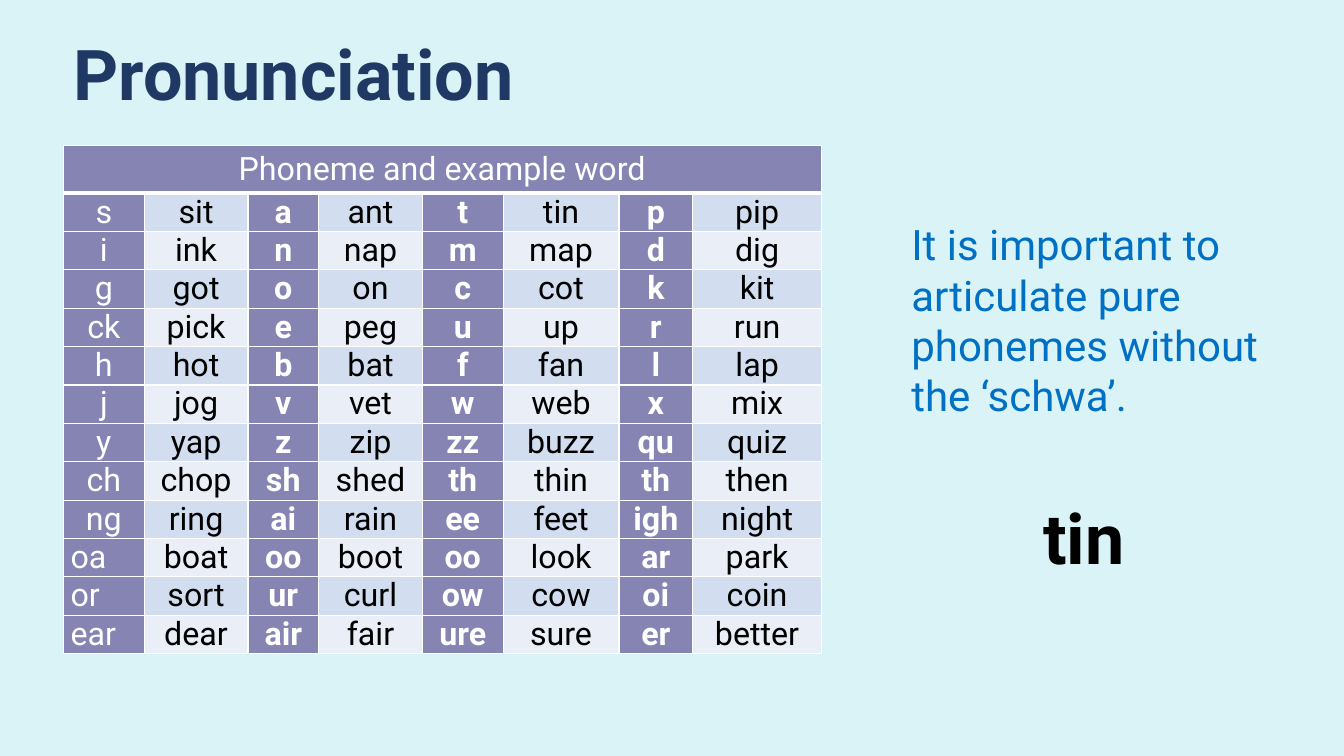
"""Build the slide of phonemes with example words."""
from dataclasses import dataclass

from lxml import etree
from pptx import Presentation
from pptx import util as u
from pptx.dml.color import RGBColor
from pptx.enum import text
from pptx.oxml import ns

WIDE, HIGH = u.Inches(13.33), u.Inches(7.5)
FONT = "Roboto"
SKY = RGBColor(0xD9, 0xF3, 0xF7)
NAVY = RGBColor(0x20, 0x38, 0x64)
BLUE = RGBColor(0x00, 0x70, 0xC4)
PLUM = RGBColor(0x35, 0x17, 0x71)
WHITE = RGBColor(0xFF, 0xFF, 0xFF)
BLACK = RGBColor(0x00, 0x00, 0x00)
BANDS = (RGBColor(0xD2, 0xDE, 0xEF), RGBColor(0xEA, 0xEF, 0xF7))
LEFT, MID = text.PP_ALIGN.LEFT, text.PP_ALIGN.CENTER

COLS = (6, 7.73, 5.25, 7.73, 6, 8.63, 5.48, 9.6)
HEAD, ROW = 6.27, 5.08
WORDS = """
s sit a ant t tin p pip
i ink n nap m map d dig
g got o on c cot k kit
ck pick e peg u up r run
h hot b bat f fan l lap
j jog v vet w web x mix
y yap z zip zz buzz qu quiz
ch chop sh shed th thin th then
ng ring ai rain ee feet igh night
oa boat oo boot oo look ar park
or sort ur curl ow cow oi coin
ear dear air fair ure sure er better
"""
LONG = ("oa", "or", "ear")


@dataclass(frozen=True)
class Box:
    """Hold a place in hundredths of the slide's width and height."""

    x: float
    y: float
    w: float
    h: float

    def place(self) -> tuple:
        """Return left, top, width and height as lengths."""
        return across(self.x), down(self.y), across(self.w), down(self.h)


@dataclass(frozen=True)
class Line:
    """Hold a paragraph and its format."""

    words: str
    size: int
    tint: RGBColor
    bold: bool = False
    gap: int = 0
    inset: float = 0
    pitch: float = 1.0


TITLE = Box(4.73, 4.67, 86.27, 19.33)
NOTE = Box(67.07, 28.27, 32.03, 49.33)
TEXTS = (
    (TITLE, (Line("Pronunciation", 50, NAVY, True, pitch=0.9),)),
    (NOTE, (
        Line("It is important to articulate pure phonemes without the ‘schwa’.", 30, BLUE),
        Line("tin", 50, BLACK, True, gap=53, inset=9.8),
    )),
)


def across(part: float) -> int:
    """Turn hundredths of the width into a length."""
    return round(WIDE * part / 100)


def down(part: float) -> int:
    """Turn hundredths of the height into a length."""
    return round(HIGH * part / 100)


def write(para, words: str, *, size: int, tint: RGBColor, bold: bool = False,
          align=LEFT, gap: int = 0, inset: float = 0, pitch: float = 1.0) -> None:
    """Write one run of text and format its paragraph."""
    para.alignment, para.line_spacing = align, pitch
    para.space_before = u.Pt(gap)
    para._p.get_or_add_pPr().set("marL", str(across(inset)))
    run = para.add_run()
    run.text = words
    font = run.font
    font.name, font.size, font.bold = FONT, u.Pt(size), bold
    font.color.rgb = tint


def add_text(slide, box: Box, lines: tuple) -> None:
    """Add a text box with one paragraph for each line."""
    frame = slide.shapes.add_textbox(*box.place()).text_frame
    frame.word_wrap = True
    for at, line in enumerate(lines):
        para = frame.add_paragraph() if at else frame.paragraphs[0]
        write(para, line.words, size=line.size, tint=line.tint, bold=line.bold,
              gap=line.gap, inset=line.inset, pitch=line.pitch)


def edge(cell, base: int = 1) -> None:
    """Draw white borders round a cell."""
    for side, width in (("L", 1), ("R", 1), ("T", 1), ("B", base)):
        line = etree.SubElement(cell._tc.get_or_add_tcPr(), ns.qn(f"a:ln{side}"),
                                w=str(u.Pt(width)))
        fill = etree.SubElement(line, ns.qn("a:solidFill"))
        etree.SubElement(fill, ns.qn("a:srgbClr"), val=str(WHITE))


def paint(cell, tint: RGBColor) -> None:
    """Fill a cell, letting plum show half through."""
    cell.fill.solid()
    cell.fill.fore_color.rgb = tint
    if tint == PLUM:
        tone = cell._tc.tcPr.find(".//" + ns.qn("a:solidFill") + "[last()]")
        tone = cell._tc.tcPr.find(ns.qn("a:solidFill"))[0]
        etree.SubElement(tone, ns.qn("a:alpha"), val="50000")


def add_grid(slide) -> None:
    """Add the table of phonemes and words."""
    rows = [line.split() for line in WORDS.split("\n") if line]
    box = Box(4.73, 19.2, sum(COLS), HEAD + ROW * len(rows))
    grid = slide.shapes.add_table(len(rows) + 1, len(COLS), *box.place()).table
    grid.first_row = grid.horz_banding = False
    for col, part in zip(grid.columns, COLS):
        col.width = across(part)
    for at, row in enumerate(grid.rows):
        row.height = down(ROW if at else HEAD)
    head = grid.cell(0, 0)
    head.merge(grid.cell(0, len(COLS) - 1))
    for x in range(len(COLS)):
        edge(grid.cell(0, x), 3)
    paint(head, PLUM)
    write(head.text_frame.paragraphs[0], "Phoneme and example word",
          size=23, tint=WHITE, align=MID)
    for y, row in enumerate(rows):
        for x, word in enumerate(row):
            cell, sound = grid.cell(y + 1, x), x % 2 == 0
            cell.margin_left = cell.margin_right = u.Inches(0.07)
            cell.margin_top = cell.margin_bottom = 0
            edge(cell)
            paint(cell, PLUM if sound else BANDS[y % 2])
            write(cell.text_frame.paragraphs[0], word, size=23,
                  tint=WHITE if sound else BLACK, bold=sound and x > 0,
                  align=LEFT if x == 0 and word in LONG else MID)


def main() -> None:
    """Build and save the slide."""
    deck = Presentation()
    deck.slide_width, deck.slide_height = WIDE, HIGH
    slide = deck.slides.add_slide(deck.slide_layouts[6])
    slide.background.fill.solid()
    slide.background.fill.fore_color.rgb = SKY
    add_grid(slide)
    for box, lines in TEXTS:
        add_text(slide, box, lines)
    deck.save("out.pptx")


if __name__ == "__main__":
    main()
